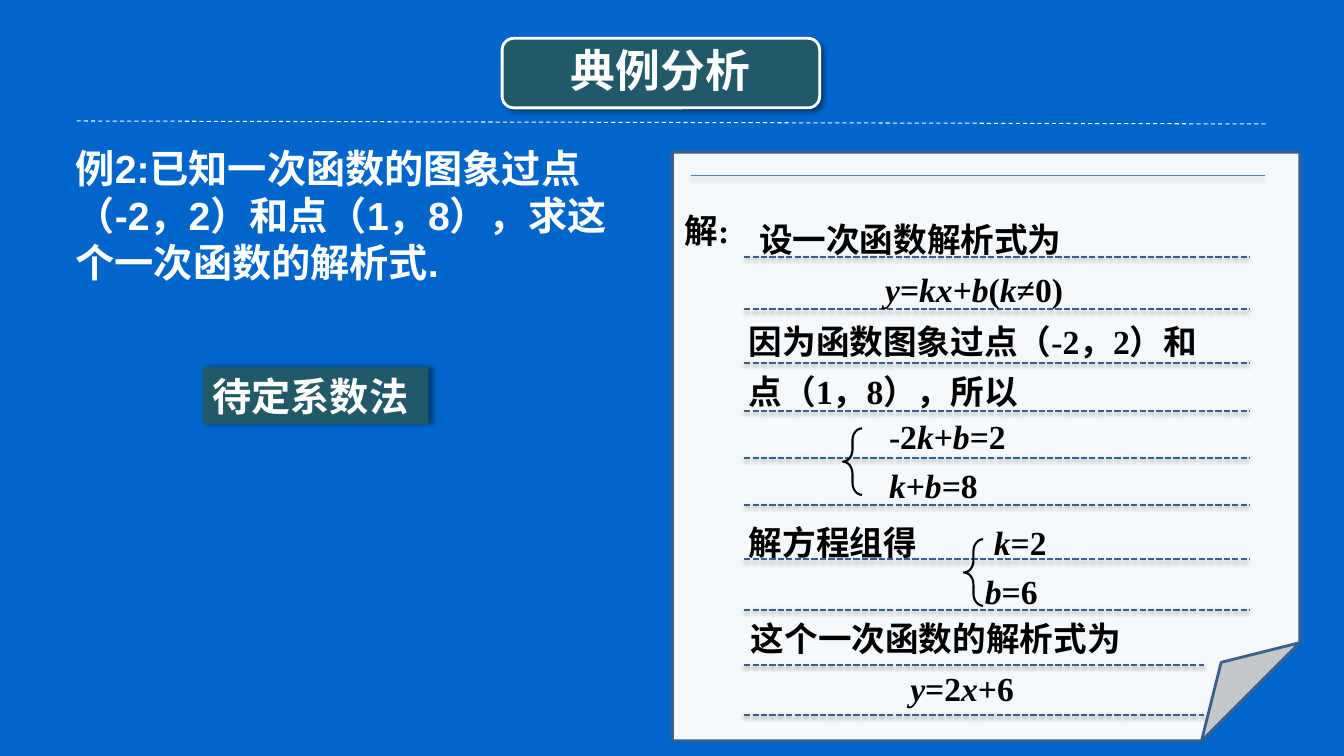
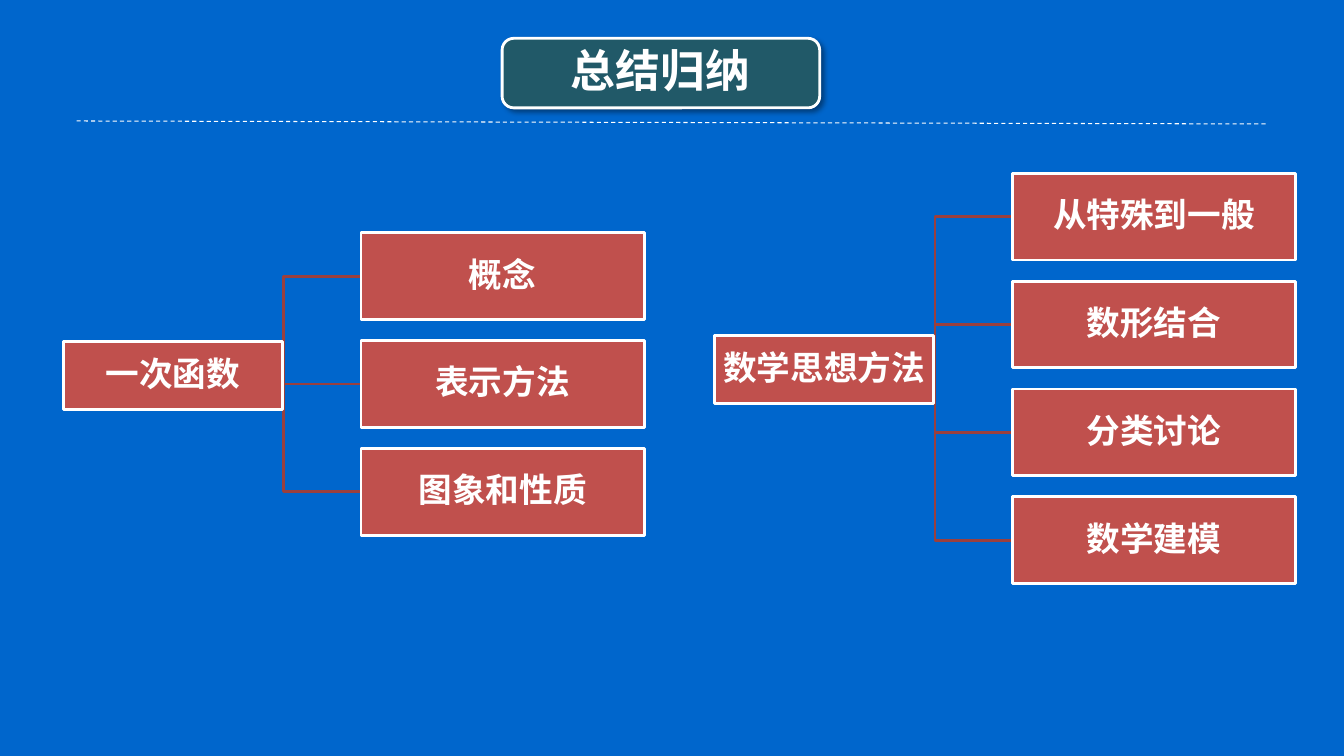
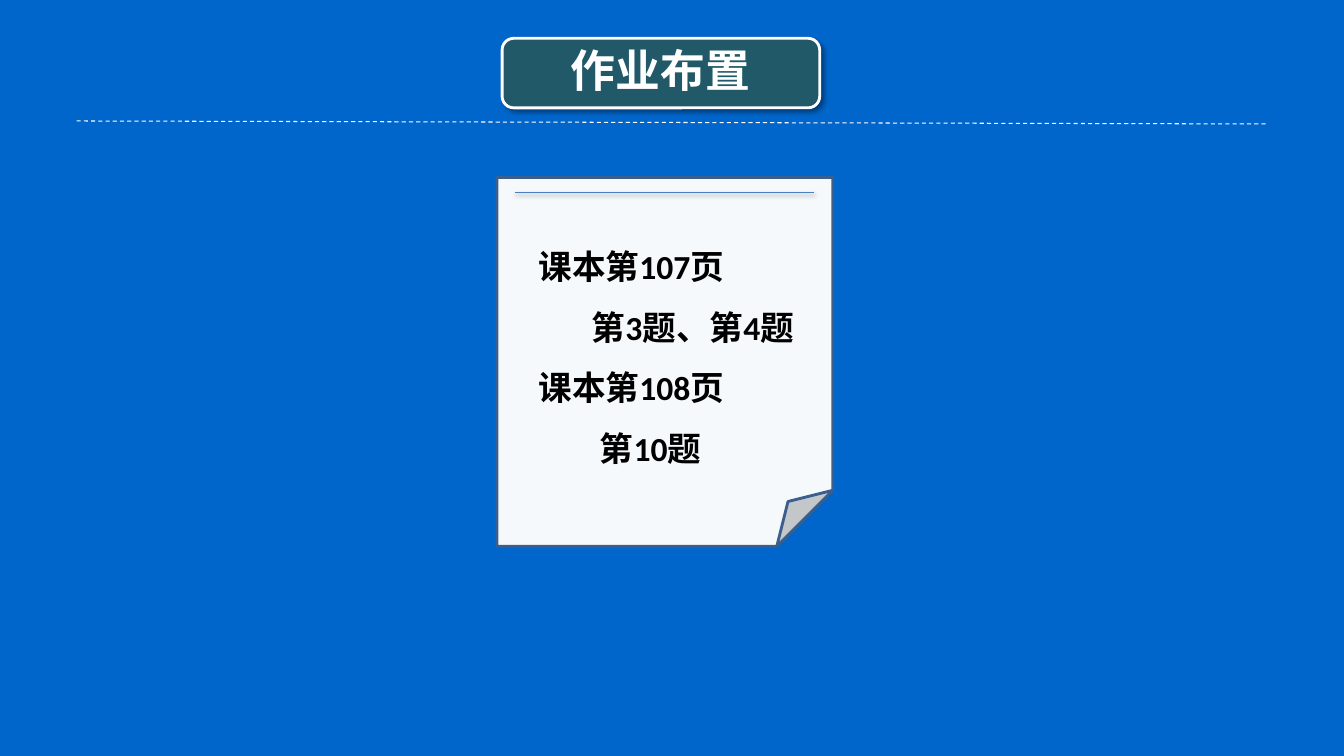
from itertools import groupby

from lxml.etree import SubElement
from pptx import Presentation
from pptx.dml.color import RGBColor
from pptx.enum.dml import MSO_LINE
from pptx.enum.shapes import MSO_CONNECTOR, MSO_SHAPE
from pptx.enum.text import MSO_ANCHOR, MSO_AUTO_SIZE, PP_ALIGN
from pptx.oxml.ns import qn
from pptx.util import Inches, Pt

BLUE, TEAL, RED, DARK_RED = "0066CC", "215968", "C0504D", "9A403E"
WHITE, BLACK = "FFFFFF", "000000"
PAPER, PAPER_EDGE, PAPER_RULE, RULING = "F6F9FC", "3A5F8C", "4B7EBC", "376092"
TITLE_ONLY, TITLE_AND_BODY = 5, 1


def rgb(color):
    return RGBColor.from_string(color)


def inches(*lengths):
    return [Inches(v) for v in lengths]


# Shapes and lines
def shadow(shape, alpha, blur, dist, angle):
    pr = shape.element.spPr
    effects = pr.find(qn("a:effectLst"))
    if effects is None:
        effects = SubElement(pr, qn("a:effectLst"))
    outer = SubElement(effects, qn("a:outerShdw"), blurRad=str(Pt(blur)),
                       dist=str(Pt(dist)), dir=str(angle * 60000),
                       algn="tl", rotWithShape="0")
    clr = SubElement(outer, qn("a:srgbClr"), val=BLACK)
    SubElement(clr, qn("a:alpha"), val=str(alpha * 1000))


def add_box(s, kind, box, fill=None, line=None, width=2):
    sp = s.shapes.add_shape(kind, *inches(*box))
    sp.shadow.inherit = False
    if fill:
        sp.fill.solid()
        sp.fill.fore_color.rgb = rgb(fill)
    else:
        sp.fill.background()
    if line:
        sp.line.color.rgb = rgb(line)
        sp.line.width = Pt(width)
    else:
        sp.line.fill.background()
    return sp


def add_line(s, start, end, color, width, dash=None, kind=MSO_CONNECTOR.STRAIGHT):
    cn = s.shapes.add_connector(kind, *inches(*start, *end))
    cn.line.color.rgb = rgb(color)
    cn.line.width = Pt(width)
    if dash:
        cn.line.dash_style = dash
    SubElement(cn.element.spPr, qn("a:effectLst"))
    return cn


def send_back(s, *shapes):
    for shape in shapes:
        s.shapes.title.element.addprevious(shape.element)


# Text
def is_math(ch):
    return ch < "\u2e80"


def is_variable(ch):
    return is_math(ch) and ch.isalpha()


def write(tf, lines, size=24, font="Calibri", color=BLACK, align=PP_ALIGN.LEFT,
          anchor=MSO_ANCHOR.TOP, margin=None, spacing=0.9, after=0.4, math=False):
    """Each line is (text, left indent); math sets formulas in Times New Roman."""
    tf.word_wrap = True
    tf.auto_size = MSO_AUTO_SIZE.NONE
    tf.vertical_anchor = anchor
    if margin is not None:
        tf.margin_left = tf.margin_right = Inches(margin)
        tf.margin_top = tf.margin_bottom = Inches(margin)
    for i, (text, indent) in enumerate(lines):
        p = tf.add_paragraph() if i else tf.paragraphs[0]
        pr = p._p.get_or_add_pPr()
        pr.set("marL", str(Inches(indent)))
        pr.set("indent", "0")
        SubElement(pr, qn("a:buNone"))
        p.alignment = align
        p.line_spacing = spacing
        p.space_before, p.space_after = Pt(0), Pt(size * after)
        p.font.size, p.font.bold, p.font.name = Pt(size), True, font
        p.font.color.rgb = rgb(color)
        if not math:
            p.add_run().text = text
            continue
        for (formula, italic), chars in groupby(
                text, lambda ch: (is_math(ch), is_variable(ch))):
            r = p.add_run()
            r.text = "".join(chars)
            if formula:
                r.font.name = "Times New Roman"
                r.font.italic = italic


def add_text(s, box, lines, **style):
    tb = s.shapes.add_textbox(*inches(*box))
    write(tb.text_frame, lines, **style)


def fill_placeholder(shape, box, lines, **style):
    shape.left, shape.top, shape.width, shape.height = inches(*box)
    write(shape.text_frame, lines, **style)


# Shared parts
def new_slide(prs, layout, title):
    s = prs.slides.add_slide(prs.slide_layouts[layout])
    x, y, w, h = box = (4.98, 0.38, 3.15, 0.69)
    badge = add_box(s, MSO_SHAPE.ROUNDED_RECTANGLE, box, TEAL, WHITE)
    shadow(badge, 40, 4, 3, 45)
    rule = add_line(s, (0.76, 1.2), (12.58, 1.23), WHITE, 0.75, MSO_LINE.DASH)
    send_back(s, badge, rule)
    fill_placeholder(s.shapes.title, (x + 0.03, y + 0.03, w - 0.07, h - 0.07),
                     [(title, 0)], size=32, color=WHITE, align=PP_ALIGN.CENTER,
                     anchor=MSO_ANCHOR.MIDDLE, margin=0.13)
    return s


def add_paper(s, box):
    x, y, w, h = box
    sheet = add_box(s, MSO_SHAPE.FOLDED_CORNER, box, PAPER, PAPER_EDGE)
    top = y + 0.04 * h
    rule = add_line(s, (x + 0.18, top), (x + 0.945 * w, top), PAPER_RULE, 0.75)
    shadow(rule, 35, 3.1, 1.8, 90)
    send_back(s, sheet, rule)


# Worked example
def equation_system(s, x, y, text_top, lines):
    brace = add_box(s, MSO_SHAPE.LEFT_BRACE, (x, y, 0.19, 0.66), None, BLACK, 1.5)
    brace.adjustments[0] = 0.62
    add_text(s, (x, text_top, 2.4, 0.97), lines, math=True)


def solution(s, box):
    x, y, w, h = box
    add_paper(s, box)
    # Ruled lines, the last two stopping short of the folded corner
    rulings = [1.04, 1.56, 2.09, 2.57, 3.03, 3.5, 4.04, 4.54, 5.09, 5.58]
    for i, dy in enumerate(rulings):
        right = x + (5.72 if i < 8 else 5.27)
        ruling = add_line(s, (x + 0.71, y + dy), (right, y + dy),
                          RULING, 1.5, MSO_LINE.SQUARE_DOT)
        shadow(ruling, 38, 3.1, 1.6, 90)
    # Steps: left, top, width, lines
    steps = [
        (0.02, 0.57, 0.99, [("解:", 0)]),
        (0.76, 0.66, 5.19, [("设一次函数解析式为", 0), ("y=kx+b(k≠0)", 1.25)]),
        (0.66, 1.67, 5.5, [("因为函数图象过点（-2，2）和", 0), ("点（1，8），所以", 0)]),
        (0.66, 3.66, 2.2, [("解方程组得", 0)]),
        (0.68, 4.62, 5.27, [("这个一次函数的解析式为", 0), ("y=2x+6", 1.58)]),
    ]
    for dx, dy, width, lines in steps:
        add_text(s, (x + dx, y + dy, width, 0.97), lines, math=True)
    equation_system(s, x + 1.69, y + 2.74, y + 2.61, [("-2k+b=2", 0.36), ("k+b=8", 0.36)])
    equation_system(s, x + 2.89, y + 3.84, y + 3.66, [("k=2", 0.2), ("b=6", 0.11)])


def example_slide(prs):
    s = new_slide(prs, TITLE_AND_BODY, "典例分析")
    problem = "例2:已知一次函数的图象过点（-2，2）和点（1，8），求这个一次函数的解析式."
    fill_placeholder(s.placeholders[1], (0.65, 1.38, 5.57, 1.51), [(problem, 0)],
                     size=28, font="Arial", color=WHITE, spacing=1, after=0)
    method = add_box(s, MSO_SHAPE.RECTANGLE, (2.01, 3.64, 2.24, 0.57), TEAL)
    shadow(method, 40, 4, 3, 0)
    write(method.text_frame, [("待定系数法", 0)], size=28, font="Arial", color=WHITE,
          anchor=MSO_ANCHOR.MIDDLE, spacing=1, after=0)
    solution(s, (6.67, 1.51, 6.22, 5.84))


# Summary trees
def topic(s, box, text):
    sp = add_box(s, MSO_SHAPE.RECTANGLE, box, RED, WHITE)
    write(sp.text_frame, [(text, 0)], color=WHITE, align=PP_ALIGN.CENTER,
          anchor=MSO_ANCHOR.MIDDLE, margin=0.02)


def tree(s, x, root_top, branch_top, root, branches):
    root_w, root_h, branch_w, branch_h, pitch = 2.17, 0.67, 2.81, 0.86, 1.07
    branch_x = x + 2.95
    tops = [branch_top + i * pitch for i in range(len(branches))]
    for top in tops:
        add_line(s, (x + 1.42, root_top + root_h / 2), (branch_x, top + branch_h / 2),
                 DARK_RED, 2, kind=MSO_CONNECTOR.ELBOW)
    topic(s, (x, root_top, root_w, root_h), root)
    for top, text in zip(tops, branches):
        topic(s, (branch_x, top, branch_w, branch_h), text)


def summary_slide(prs):
    s = new_slide(prs, TITLE_ONLY, "总结归纳")
    tree(s, 7.09, 3.33, 1.72, "数学思想方法",
         ["从特殊到一般", "数形结合", "分类讨论", "数学建模"])
    tree(s, 0.63, 3.39, 2.31, "一次函数", ["概念", "表示方法", "图象和性质"])


# Homework
def homework_slide(prs):
    s = new_slide(prs, TITLE_AND_BODY, "作业布置")
    add_paper(s, (4.93, 1.76, 3.33, 3.66))
    tasks = [("课本第107页", 0), ("第3题、第4题", 0.53),
             ("课本第108页", 0), ("第10题", 0.61)]
    fill_placeholder(s.placeholders[1], (5.24, 2.19, 3.2, 2.46), tasks,
                     spacing=1.5, after=0)


def main():
    prs = Presentation()
    prs.slide_width, prs.slide_height = inches(13.33, 7.5)
    bg = prs.slide_master.background.fill
    bg.solid()
    bg.fore_color.rgb = rgb(BLUE)
    example_slide(prs)
    summary_slide(prs)
    homework_slide(prs)
    prs.save("out.pptx")


if __name__ == "__main__":
    main()
